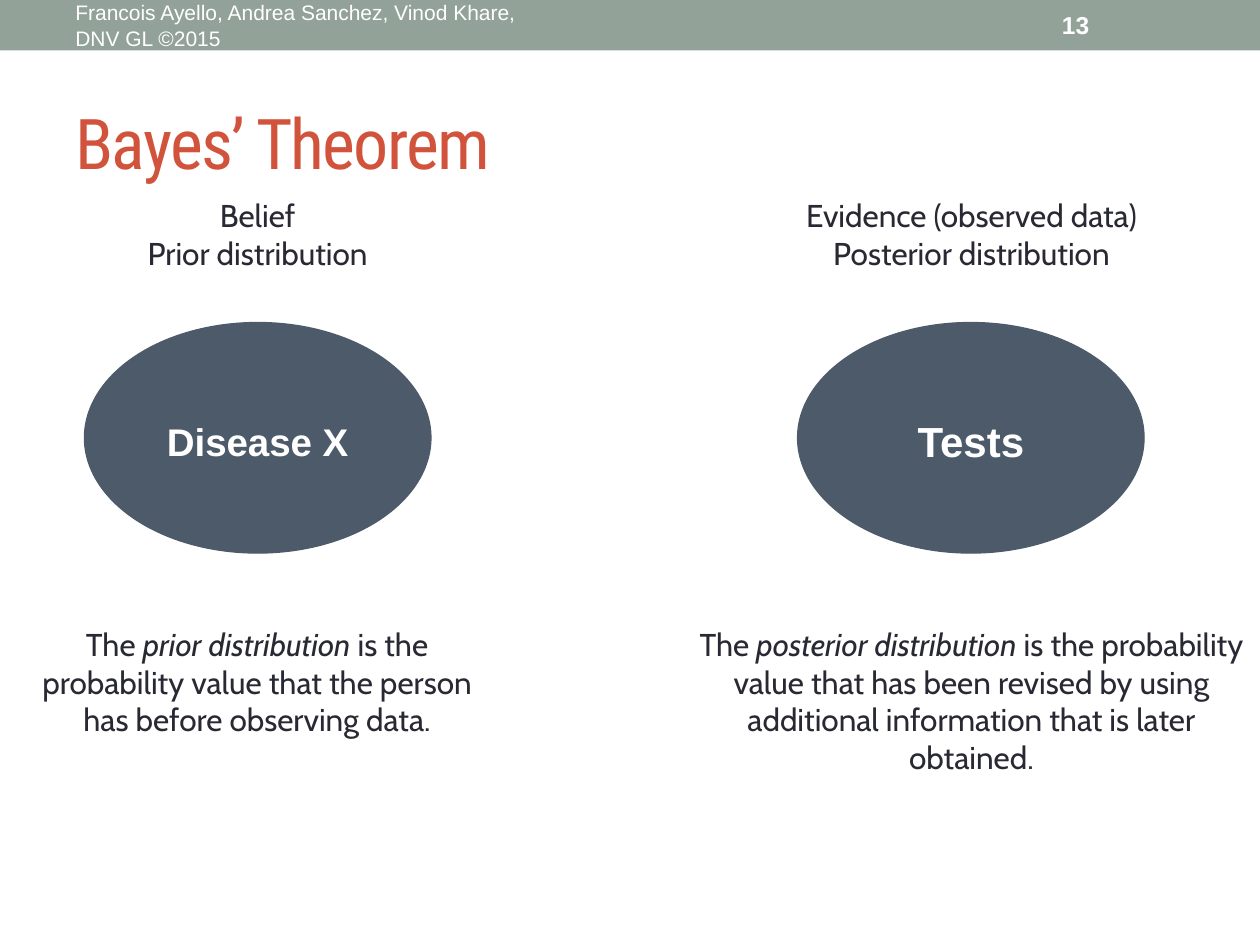
from dataclasses import dataclass

from pptx import Presentation
from pptx.dml.color import RGBColor
from pptx.enum.shapes import MSO_SHAPE as Shape
from pptx.enum.text import MSO_ANCHOR as Anchor, MSO_AUTO_SIZE as AutoSize, PP_ALIGN as Align
from pptx.util import Inches, Pt


@dataclass(frozen=True)
class Theme:
    band: RGBColor = RGBColor.from_string("93A299")
    title: RGBColor = RGBColor.from_string("D2533C")
    body: RGBColor = RGBColor.from_string("292934")
    ellipse: RGBColor = RGBColor.from_string("4C5A6A")
    white: RGBColor = RGBColor.from_string("FFFFFF")
    title_font: str = "Roboto Condensed"
    body_font: str = "Cabin"
    label_font: str = "Arial"
    title_size: int = 40
    body_size: int = 18
    number_size: int = 14
    credit_size: int = 12


theme = Theme()


def style_run(run, name, size, color, bold=False, italic=False):
    run.font.name = name
    run.font.size = Pt(size)
    run.font.color.rgb = color
    run.font.bold = bold
    run.font.italic = italic


def add_text(slide, box, paragraphs, name, size, color, align=Align.LEFT,
             anchor=Anchor.TOP, bold=False):
    """Add a text box; each paragraph is a list of (text, italic) pairs."""
    shape = slide.shapes.add_textbox(*map(Inches, box))
    frame = shape.text_frame
    frame.word_wrap = True
    frame.vertical_anchor = anchor
    if anchor == Anchor.TOP:
        frame.auto_size = AutoSize.SHAPE_TO_FIT_TEXT
    for index, pieces in enumerate(paragraphs):
        paragraph = frame.add_paragraph() if index else frame.paragraphs[0]
        paragraph.alignment = align
        for text, italic in pieces:
            run = paragraph.add_run()
            run.text = text
            style_run(run, name, size, color, bold, italic)


presentation = Presentation()
presentation.slide_width = Inches(10)
presentation.slide_height = Inches(7.5)
slide = presentation.slides.add_slide(presentation.slide_layouts[5])

# Header band with credit and slide number
band = slide.shapes.add_shape(Shape.RECTANGLE, 0, 0, Inches(10), Inches(0.4))
band.shadow.inherit = False
band.fill.solid()
band.fill.fore_color.rgb = theme.band
band.line.fill.background()
add_text(slide, (0.5, 0.02, 3.96, 0.36),
         [[("Francois Ayello, Andrea Sanchez, Vinod Khare, DNV GL ©2015", False)]],
         theme.label_font, theme.credit_size, theme.white, anchor=Anchor.MIDDLE)
add_text(slide, (8.33, 0.02, 1.17, 0.36), [[("13", False)]],
         theme.label_font, theme.number_size, theme.white, anchor=Anchor.MIDDLE, bold=True)

# Title
title = slide.shapes.title
title.left, title.top, title.width, title.height = map(Inches, (0.5, 0.58, 9, 1.08))
title.text_frame.text = "Bayes’ Theorem"
title.text_frame.vertical_anchor = Anchor.MIDDLE
paragraph = title.text_frame.paragraphs[0]
paragraph.alignment = Align.LEFT
style_run(paragraph.runs[0], theme.title_font, theme.title_size, theme.title)
paragraph.runs[0]._r.get_or_add_rPr().set("spc", "-100")

# Two columns: heading, ellipse and definition
# (heading box, heading lines, ellipse left, label, label size, definition box, definition)
columns = [
    ((0.83, 1.51, 2.43, 0.71), ["Belief", "Prior distribution"],
     0.67, "Disease X", 22, (0.15, 4.91, 3.78, 1.01),
     [("The ", False), ("prior distribution", True),
      (" is the probability value that the person has before observing data.", False)]),
    ((5.92, 1.51, 3.58, 0.71), ["Evidence (observed data)", "Posterior distribution"],
     6.33, "Tests", 24, (5.42, 4.91, 4.58, 1.31),
     [("The ", False), ("posterior distribution ", True),
      ("is the probability value that has been revised by using additional "
       "information that is later obtained.", False)]),
]
for heading_box, heading, left, label, label_size, definition_box, definition in columns:
    add_text(slide, heading_box, [[(line, False)] for line in heading],
             theme.body_font, theme.body_size, theme.body, Align.CENTER)

    ellipse = slide.shapes.add_shape(Shape.OVAL, Inches(left), Inches(2.56),
                                     Inches(2.75), Inches(1.83))
    ellipse.shadow.inherit = False
    ellipse.fill.solid()
    ellipse.fill.fore_color.rgb = theme.ellipse
    ellipse.line.color.rgb = theme.ellipse
    ellipse.line.width = Pt(0.75)
    ellipse.text_frame.text = label
    ellipse.text_frame.vertical_anchor = Anchor.MIDDLE
    paragraph = ellipse.text_frame.paragraphs[0]
    paragraph.alignment = Align.CENTER
    paragraph.line_spacing = 1.13
    style_run(paragraph.runs[0], theme.label_font, label_size, theme.white, bold=True)

    add_text(slide, definition_box, [definition],
             theme.body_font, theme.body_size, theme.body, Align.CENTER)

presentation.save("out.pptx")
